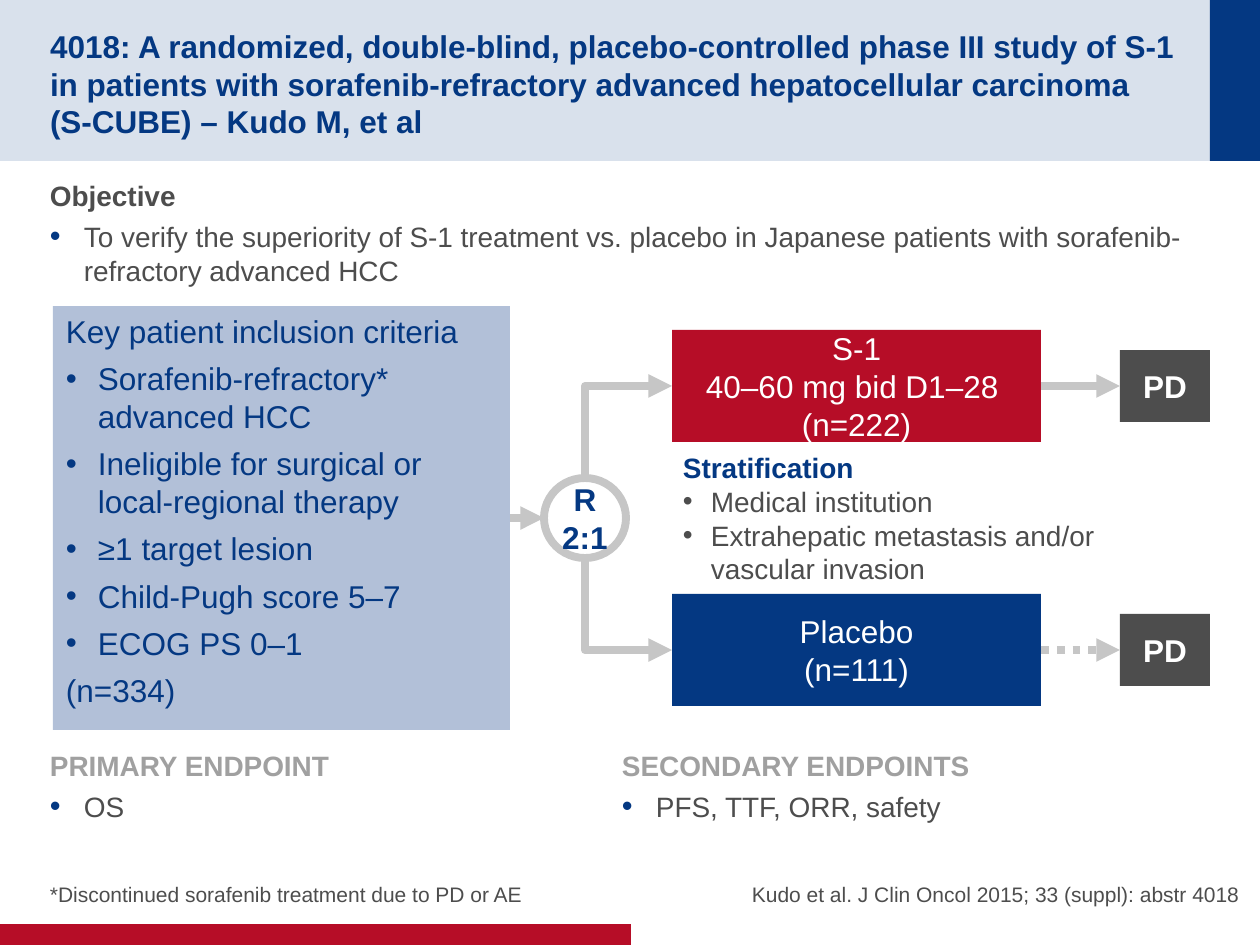
"""Build the S-CUBE phase III study design slide."""
from dataclasses import dataclass
from typing import NamedTuple, Optional

from lxml.etree import SubElement
from pptx import Presentation
from pptx.dml.color import RGBColor
from pptx.enum.dml import MSO_LINE
from pptx.enum.shapes import MSO_CONNECTOR, MSO_SHAPE
from pptx.enum.text import MSO_ANCHOR, MSO_AUTO_SIZE, PP_ALIGN
from pptx.oxml.ns import qn
from pptx.util import Emu, Pt

EMU_PER_PX = 914400 / 126


@dataclass(frozen=True)
class Theme:
    font: str = "Arial"
    navy: str = "043882"
    red: str = "B60D27"
    dark: str = "4D4D4D"
    pale: str = "B2C0D8"
    line: str = "C6C6C6"
    muted: str = "A0A0A0"
    white: str = "FFFFFF"
    large: int = 18
    medium: int = 16
    small: int = 12
    stroke: float = 4.5


THEME = Theme()


class Area(NamedTuple):
    left: int
    top: int
    width: int
    height: int


class Inset(NamedTuple):
    left: int = 13
    top: int = 6
    right: int = 13
    bottom: int = 6


class Para(NamedTuple):
    text: str
    color: str = THEME.navy
    size: int = THEME.large
    bold: bool = False
    align: PP_ALIGN = PP_ALIGN.LEFT
    after: float = 0
    indent: int = 0
    bullet_color: Optional[str] = None
    bullet_size: int = 100


class Arm(NamedTuple):
    lines: list
    color: str
    top: int
    dash: Optional[MSO_LINE]


FLUSH = Inset(0, 6, 0, 6)
SIDES = Inset(13, 0, 13, 0)
NONE = Inset(0, 0, 0, 0)
ARMS = [
    Arm(["S-1\v40–60 mg bid D1–28 ", "(n=222)"], THEME.red, 330, None),
    Arm(["Placebo", "(n=111)"], THEME.navy, 594, MSO_LINE.ROUND_DOT),
]
CRITERIA = [
    "Sorafenib-refractory* advanced HCC",
    "Ineligible for surgical or local-regional therapy",
    "≥1 target lesion",
    "Child-Pugh score 5–7",
    "ECOG PS 0–1",
]


def px(value: float) -> Emu:
    """Turn pixels into EMU."""
    return Emu(round(value * EMU_PER_PX))


def rgb(color: str) -> RGBColor:
    """Read a hex colour."""
    return RGBColor.from_string(color)


def write(box, paras: list, inset: Inset, anchor=MSO_ANCHOR.TOP, wrap: bool = True) -> None:
    """Fill a box with formatted paragraphs."""
    frame = box.text_frame
    frame.auto_size = MSO_AUTO_SIZE.NONE
    frame.word_wrap = wrap
    frame.vertical_anchor = anchor
    frame.margin_left, frame.margin_top, frame.margin_right, frame.margin_bottom = map(px, inset)
    for index, item in enumerate(paras):
        para = frame.add_paragraph() if index else frame.paragraphs[0]
        para.text = item.text
        para.alignment = item.align
        para.space_after = Pt(item.after)
        if item.bullet_color:
            add_bullet(para, item)
        font = para.font
        font.name, font.size, font.bold = THEME.font, Pt(item.size), item.bold
        font.color.rgb = rgb(item.color)


def add_bullet(para, item: Para) -> None:
    """Give a paragraph a hanging bullet."""
    properties = para._p.get_or_add_pPr()
    properties.set("marL", str(px(item.indent)))
    properties.set("indent", str(-px(item.indent)))
    SubElement(SubElement(properties, qn("a:buClr")), qn("a:srgbClr"), val=item.bullet_color)
    SubElement(properties, qn("a:buSzPct"), val=str(item.bullet_size * 1000))
    SubElement(properties, qn("a:buFont"), typeface=THEME.font)
    SubElement(properties, qn("a:buChar"), char="•")


def add_box(page, area: Area, color: Optional[str], kind=MSO_SHAPE.RECTANGLE):
    """Draw a flat shape, outlined when it has no fill."""
    box = page.shapes.add_shape(kind, *map(px, area))
    box.shadow.inherit = False
    if color:
        box.fill.solid()
        box.fill.fore_color.rgb = rgb(color)
        box.line.fill.background()
    else:
        box.fill.background()
        box.line.color.rgb = rgb(THEME.line)
        box.line.width = Pt(THEME.stroke)
    return box


def add_text(page, area: Area, paras: list, inset: Inset = Inset(), anchor=MSO_ANCHOR.TOP) -> None:
    """Place a text box."""
    write(page.shapes.add_textbox(*map(px, area)), paras, inset, anchor)


def add_arrow(page, begin: tuple, end: tuple, kind=MSO_CONNECTOR.STRAIGHT, dash=None):
    """Draw a grey connector with an arrowhead at its end."""
    arrow = page.shapes.add_connector(kind, *map(px, begin + end))
    arrow.line.color.rgb = rgb(THEME.line)
    arrow.line.width = Pt(THEME.stroke)
    if dash:
        arrow.line.dash_style = dash
    SubElement(arrow.line._get_or_add_ln(), qn("a:tailEnd"), type="triangle")
    SubElement(arrow._element.spPr, qn("a:effectLst"))
    return arrow


def add_corner_arrow(page, begin: tuple, end: tuple) -> None:
    """Draw an arrow that runs vertically, then turns right."""
    arrow = add_arrow(page, begin, end, MSO_CONNECTOR.ELBOW)
    rise, run = abs(end[1] - begin[1]), end[0] - begin[0]
    arrow.left, arrow.top = px((begin[0] + end[0] - rise) / 2), px((begin[1] + end[1] - run) / 2)
    arrow.width, arrow.height = px(rise), px(run)
    upward = end[1] < begin[1]
    frame = arrow._element.spPr.find(qn("a:xfrm"))
    frame.set("rot", str((90 if upward else 270) * 60000))
    frame.set("flipH", "1")
    frame.set("flipV", "1" if upward else "0")
    arrow._element.spPr.find(qn("a:prstGeom")).set("prst", "bentConnector2")


def add_section(page, area: Area, heading: Para, body: str, inset: Inset) -> None:
    """Place a bold heading with one bullet below it."""
    item = Para(body, THEME.dark, THEME.medium, after=4, indent=34,
                bullet_color=THEME.navy, bullet_size=110)
    add_text(page, area, [heading, item], inset)


def add_frame(page) -> None:
    """Draw the banner, the footer bar and the title."""
    banner = add_box(page, Area(0, 0, 1260, 161), THEME.navy)
    SubElement(banner.fill._xPr.find(".//" + qn("a:srgbClr")), qn("a:alpha"), val="15000")
    add_box(page, Area(1210, 0, 50, 161), THEME.navy)
    add_box(page, Area(0, 924, 631, 21), THEME.red)
    title = page.shapes.title
    title.left, title.top, title.width, title.height = map(px, Area(50, 25, 1135, 111))
    text = ("4018: A randomized, double-blind, placebo-controlled phase III study of S-1 in patients "
            "with sorafenib-refractory advanced hepatocellular carcinoma \v(S-CUBE) – Kudo M, et al")
    write(title, [Para(text, bold=True)], Inset(0, 6, 0, 0), MSO_ANCHOR.MIDDLE)
    banner._element.getparent().append(title._element)


def add_design(page) -> None:
    """Draw the criteria, the randomization and the treatment arms."""
    criteria = add_box(page, Area(53, 306, 457, 424), THEME.pale)
    bullets = [Para(text, after=5.4, indent=32, bullet_color=THEME.navy) for text in CRITERIA]
    write(criteria, [Para("Key patient inclusion criteria", after=5.4), *bullets, Para("(n=334)")], Inset())
    circle = add_box(page, Area(544, 478, 82, 80), None, MSO_SHAPE.OVAL)
    write(circle, [Para(text, bold=True, align=PP_ALIGN.CENTER) for text in ("R", "2:1")],
          Inset(), MSO_ANCHOR.MIDDLE, wrap=False)
    add_arrow(page, (510, 518), (544, 518)).begin_connect(criteria, 3)
    for arm in ARMS:
        middle = arm.top + 56
        add_corner_arrow(page, (585, 478 if middle < 518 else 558), (672, middle))
        treatment = add_box(page, Area(672, arm.top, 369, 112), arm.color)
        write(treatment, [Para(text, THEME.white, align=PP_ALIGN.CENTER) for text in arm.lines],
              SIDES, MSO_ANCHOR.MIDDLE)
        outcome = add_box(page, Area(1120, middle - 36, 90, 72), THEME.dark)
        write(outcome, [Para("PD", THEME.white, bold=True, align=PP_ALIGN.CENTER)], SIDES, MSO_ANCHOR.MIDDLE)
        arrow = add_arrow(page, (1041, middle), (1120, middle), dash=arm.dash)
        arrow.begin_connect(treatment, 3)
        arrow.end_connect(outcome, 1)
    factors = [Para(text, THEME.dark, THEME.medium, indent=28, bullet_color=THEME.dark)
               for text in ("Medical institution", "Extrahepatic metastasis and/or vascular invasion")]
    add_text(page, Area(670, 445, 450, 123), [Para("Stratification", size=THEME.medium, bold=True), *factors])


def main() -> None:
    """Build and save the deck."""
    deck = Presentation()
    deck.slide_width, deck.slide_height = px(1260), px(945)
    page = deck.slides.add_slide(deck.slide_layouts[5])
    add_frame(page)
    add_section(page, Area(50, 173, 1159, 120), Para("Objective", THEME.dark, THEME.medium, True, after=4),
                "To verify the superiority of S-1 treatment vs. placebo in Japanese patients "
                "with sorafenib-refractory advanced HCC", FLUSH)
    add_design(page)
    for left, inset, heading, body in ((50, FLUSH, "PRIMARY ENDPOINT", "OS"),
                                       (609, Inset(), "SECONDARY ENDPOINTS", "PFS, TTF, ORR, safety")):
        add_section(page, Area(left, 743, 570, 107),
                    Para(heading, THEME.muted, THEME.medium, True, after=4), body, inset)
    for left, align, text in ((50, PP_ALIGN.LEFT, "*Discontinued sorafenib treatment due to PD or AE"),
                              (670, PP_ALIGN.RIGHT, "Kudo et al. J Clin Oncol 2015; 33 (suppl): abstr 4018")):
        note = Para(text, THEME.dark, THEME.small, align=align, after=4)
        add_text(page, Area(left, 840, 570, 67), [note], NONE, MSO_ANCHOR.BOTTOM)
    deck.save("out.pptx")


if __name__ == "__main__":
    main()
